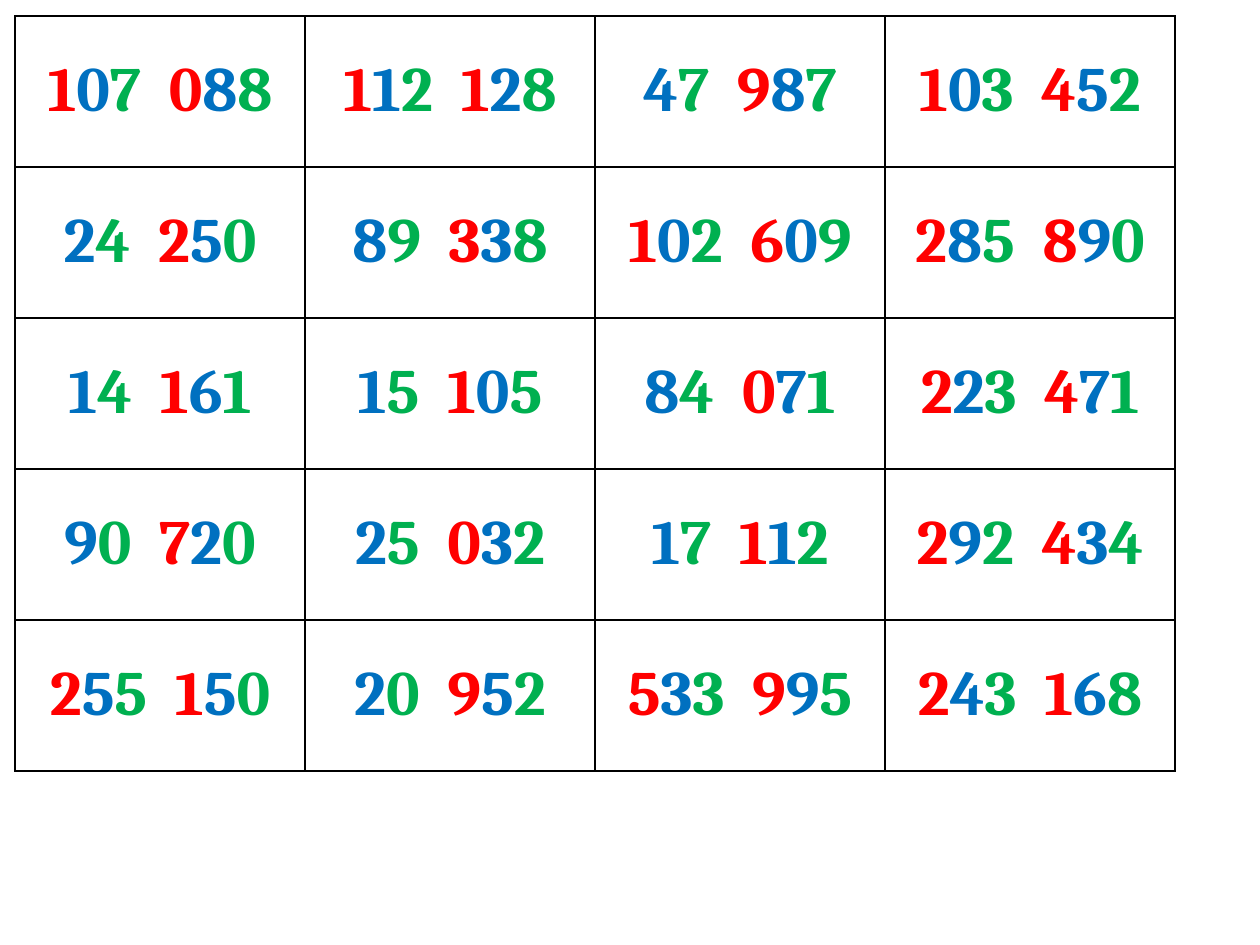
"""Build a slide with a table of six-digit numbers coloured by place value."""
from dataclasses import dataclass

import lxml.etree
import pptx
import pptx.dml.color
import pptx.enum.text
import pptx.oxml.ns
import pptx.table
import pptx.util

RGBColor = pptx.dml.color.RGBColor
RED = RGBColor(0xFF, 0x00, 0x00)
BLUE = RGBColor(0x00, 0x70, 0xC0)
GREEN = RGBColor(0x00, 0xB0, 0x50)
BLACK = RGBColor(0x00, 0x00, 0x00)
WHITE = RGBColor(0xFF, 0xFF, 0xFF)

PLACE_COLORS = (RED, BLUE, GREEN)
FONT = "Cambria"
FONT_SIZE = pptx.util.Pt(36)
BORDER_WIDTH = pptx.util.Pt(1)
PX_PER_INCH = 126


@dataclass(frozen=True)
class Grid:
    left: int
    top: int
    col_width: int
    row_height: int
    rows: tuple[tuple[int, ...], ...]


NUMBERS = Grid(15, 16, 290, 151, (
    (107088, 112128, 47987, 103452),
    (24250, 89338, 102609, 285890),
    (14161, 15105, 84071, 223471),
    (90720, 25032, 17112, 292434),
    (255150, 20952, 533995, 243168),
))


def px(n: int) -> pptx.util.Emu:
    return pptx.util.Emu(round(n * 914400 / PX_PER_INCH))


def add_borders(cell: pptx.table._Cell) -> None:
    qn = pptx.oxml.ns.qn
    tc_pr = cell._tc.get_or_add_tcPr()
    for i, side in enumerate(("a:lnL", "a:lnR", "a:lnT", "a:lnB")):
        ln = tc_pr.makeelement(qn(side), {"w": str(int(BORDER_WIDTH))})
        fill = lxml.etree.SubElement(ln, qn("a:solidFill"))
        lxml.etree.SubElement(fill, qn("a:srgbClr"), val=str(BLACK))
        tc_pr.insert(i, ln)


def fill_cell(cell: pptx.table._Cell, number: int) -> None:
    cell.fill.solid()
    cell.fill.fore_color.rgb = WHITE
    cell.vertical_anchor = pptx.enum.text.MSO_ANCHOR.MIDDLE
    add_borders(cell)
    p = cell.text_frame.paragraphs[0]
    p.alignment = pptx.enum.text.PP_ALIGN.CENTER
    digits = str(number)
    for i, digit in enumerate(digits):
        places_left = len(digits) - i - 1
        r = p.add_run()
        r.text = digit + "  " if places_left == 3 else digit
        r.font.name = FONT
        r.font.size = FONT_SIZE
        r.font.bold = True
        r.font.color.rgb = PLACE_COLORS[2 - places_left % 3]


def add_grid(s: pptx.slide.Slide, grid: Grid) -> None:
    n_rows, n_cols = len(grid.rows), len(grid.rows[0])
    table = s.shapes.add_table(
        n_rows, n_cols, px(grid.left), px(grid.top),
        px(grid.col_width * n_cols), px(grid.row_height * n_rows),
    ).table
    table.first_row = False
    table.horz_banding = False
    for col in table.columns:
        col.width = px(grid.col_width)
    for row, numbers in zip(table.rows, grid.rows):
        row.height = px(grid.row_height)
        for cell, number in zip(row.cells, numbers):
            fill_cell(cell, number)


def main() -> None:
    prs = pptx.Presentation()
    prs.slide_width, prs.slide_height = px(1260), px(945)
    s = prs.slides.add_slide(prs.slide_layouts[6])
    add_grid(s, NUMBERS)
    prs.save("out.pptx")


if __name__ == "__main__":
    main()
